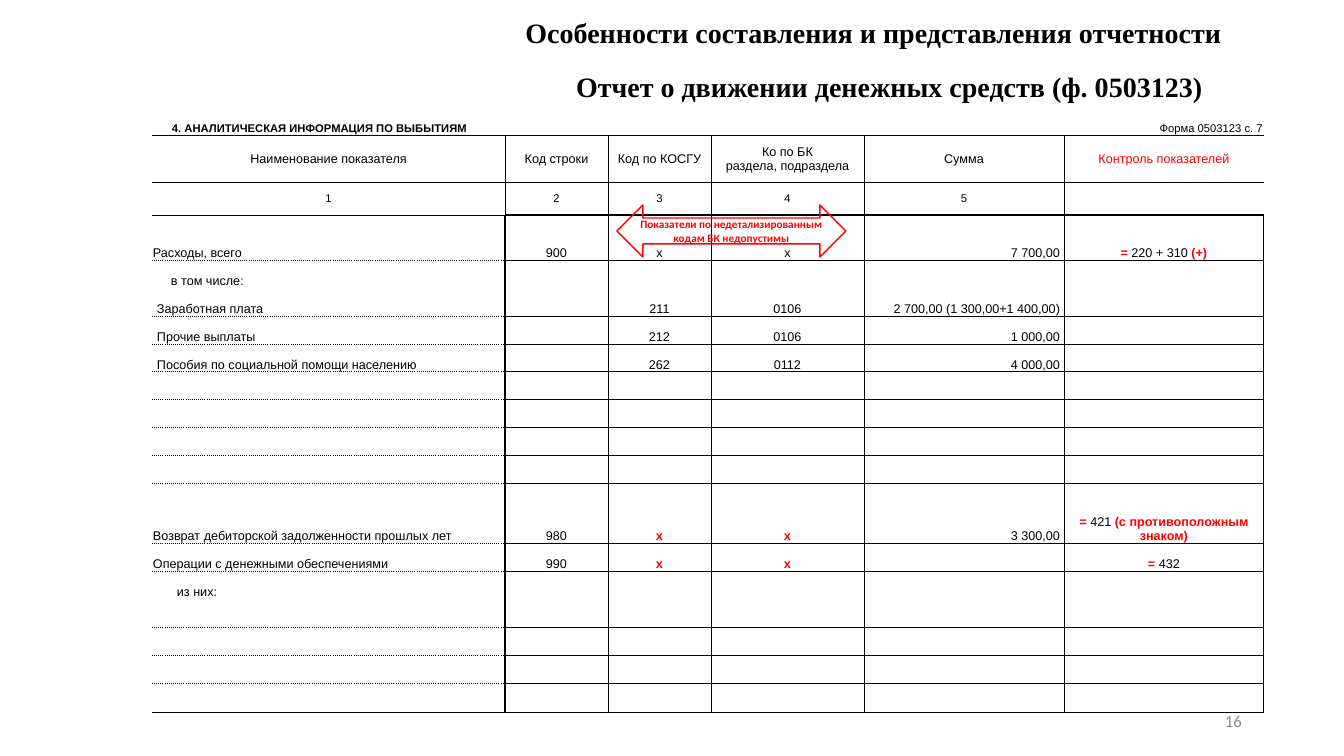
from lxml.etree import SubElement as Sub
from pptx import Presentation
from pptx.dml.color import RGBColor
from pptx.enum.shapes import MSO_SHAPE as Kind
from pptx.enum.text import MSO_ANCHOR as Anchor, MSO_AUTO_SIZE as Fit, PP_ALIGN as Align
from pptx.oxml.ns import qn
from pptx.util import Emu, Pt

BLACK, RED, GREY, WHITE = "000000", "FF0000", "8C8C8C", "FFFFFF"
HEADS = ["Особенности составления и представления отчетности",
         "Отчет о движении денежных средств (ф. 0503123)"]
NOTE = "Показатели по недетализированным кодам БК недопустимы"
PAGE = "16"
EMPTY = [""] * 6
# Tuples alternate bold red and plain black runs.
ROWS = [
    ["4. АНАЛИТИЧЕСКАЯ ИНФОРМАЦИЯ ПО ВЫБЫТИЯМ", "", "", "", "", "Форма 0503123 с. 7"],
    ["Наименование показателя", "Код строки", "Код по КОСГУ",
     "Ко по БК\vраздела, подраздела", "Сумма", "Контроль показателей"],
    ["1", "2", "3", "4", "5", ""],
    ["Расходы, всего", "900", "х", "х", "7 700,00", ("= ", "220 + 310 ", "(+)")],
    ["в том числе:", "", "", "", "", ""],
    ["Заработная плата", "", "211", "0106", "2 700,00 (1 300,00+1 400,00)", ""],
    ["Прочие выплаты", "", "212", "0106", "1 000,00", ""],
    ["Пособия по социальной помощи населению", "", "262", "0112", "4 000,00", ""],
    *[EMPTY] * 4,
    ["Возврат дебиторской задолженности прошлых лет", "980", ("х",), ("х",), "3 300,00",
     ("= ", "421 ", "(с противоположным знаком)")],
    ["Операции с денежными обеспечениями", "990", ("х",), ("х",), "", ("= ", "432")],
    ["из них:", "", "", "", "", ""],
    *[EMPTY] * 4,
]
WIDTHS = [353, 103, 103, 153, 200, 200]
TALL = {1: 47, 2: 33, 3: 45, 12: 60, 18: 29}
INDENT = {0: 20, 4: 19, 5: 5, 6: 5, 7: 5, 14: 25}
ALIGNS = [Align.LEFT, Align.CENTER, Align.CENTER, Align.CENTER, Align.RIGHT, Align.CENTER]
LAST = len(ROWS) - 1


def px(n):
    return Emu(round(n * 914400 / 100.8))


def rgb(tint):
    return RGBColor.from_string(tint)


def style(font, size, face, tint, bold=False):
    font.size, font.name, font.bold = Pt(size), face, bold
    font.color.rgb = rgb(tint)


def write(shape, text, size, face, tint, bold, align):
    frame = shape.text_frame
    frame.word_wrap, frame.auto_size = True, Fit.NONE
    frame.vertical_anchor = Anchor.MIDDLE
    para = frame.paragraphs[0]
    para.text, para.alignment = text, align
    style(para.font, size, face, tint, bold)


def below(r, c):
    if r in (-1, 4, 14):
        return None
    if c and r in (2, LAST):
        return 1, "solid"
    return 0.5, "dot" if c == 0 and 3 <= r < LAST else "solid"


def beside(r, c):
    if r == 0 or c < 0 or (c == 5 and r < 3):
        return None
    return 1 if c in (0, 5) and r >= 3 else 0.5, "solid"


def border(cell, r, c):
    props = cell._tc.get_or_add_tcPr()
    sides = {"L": beside(r, c - 1), "R": beside(r, c), "T": below(r - 1, c), "B": below(r, c)}
    for side, rule in sides.items():
        line = Sub(props, qn("a:ln" + side))
        if rule is None:
            Sub(line, qn("a:noFill"))
            continue
        line.set("w", str(Pt(rule[0])))
        Sub(Sub(line, qn("a:solidFill")), qn("a:srgbClr")).set("val", BLACK)
        Sub(line, qn("a:prstDash")).set("val", rule[1])


def fill(cell, r, c, text):
    border(cell, r, c)
    cell.fill.solid()
    cell.fill.fore_color.rgb = rgb(WHITE)
    cell.margin_left = px(INDENT.get(r, 1) if c == 0 else 1)
    cell.margin_right = px(4 if c == 4 and r > 2 else 1)
    cell.margin_top, cell.margin_bottom = px(1), 0
    cell.vertical_anchor = Anchor.MIDDLE if r in (1, 2) else Anchor.BOTTOM
    para = cell.text_frame.paragraphs[0]
    para.alignment = Align.CENTER if r in (1, 2) else Align.RIGHT if (r, c) == (0, 5) else ALIGNS[c]
    size = 8 if r in (0, 2) else 9
    tint = RED if (r, c) == (1, 5) else BLACK
    if isinstance(text, tuple):
        para.font.size, para.font.name = Pt(size), "Arial"
        for i, part in enumerate(text):
            run = para.add_run()
            run.text = part
            run.font.bold = i % 2 == 0
            run.font.color.rgb = rgb(BLACK if i % 2 else RED)
        return
    para.text = text
    style(para.font, size, "Arial", tint, (r, c) == (0, 0))
    if not text:
        para._p.get_or_add_endParaRPr().set("sz", str(size * 100))


def main():
    deck = Presentation()
    deck.slide_width, deck.slide_height = px(1344), px(756)
    slide = deck.slides.add_slide(deck.slide_layouts[5])
    shapes = slide.shapes

    title = shapes.title
    title.left, title.top, title.width, title.height = map(px, (450, 10, 847, 44))
    second = shapes.add_textbox(*map(px, (466, 64, 847, 44)))
    for box, text in zip((title, second), HEADS):
        write(box, text, 20, "Times New Roman", BLACK, True, Align.CENTER)

    highs = [TALL.get(r, 28) for r in range(len(ROWS))]
    area = map(px, (152, 107, sum(WIDTHS), sum(highs)))
    table = shapes.add_table(len(ROWS), len(WIDTHS), *area).table
    table.first_row = table.horz_banding = False
    for col, width in zip(table.columns, WIDTHS):
        col.width = px(width)
    for r, (row, high) in enumerate(zip(ROWS, highs)):
        table.rows[r].height = px(high)
        for c, text in enumerate(row):
            fill(table.cell(r, c), r, c, text)
    table.cell(0, 0).merge(table.cell(0, 1))

    arrow = shapes.add_shape(Kind.LEFT_RIGHT_ARROW, *map(px, (617, 205, 229, 52)))
    arrow.shadow.inherit = False
    arrow.fill.background()
    arrow.line.color.rgb, arrow.line.width = rgb(RED), Pt(1)
    write(arrow, NOTE, 8, "Calibri", RED, True, Align.CENTER)
    frame = arrow.text_frame
    frame.margin_left = frame.margin_right = frame.margin_top = frame.margin_bottom = 0

    page = shapes.add_textbox(*map(px, (950, 701, 302, 40)))
    write(page, PAGE, 12, "Calibri", GREY, False, Align.RIGHT)
    deck.save("out.pptx")


if __name__ == "__main__":
    main()
